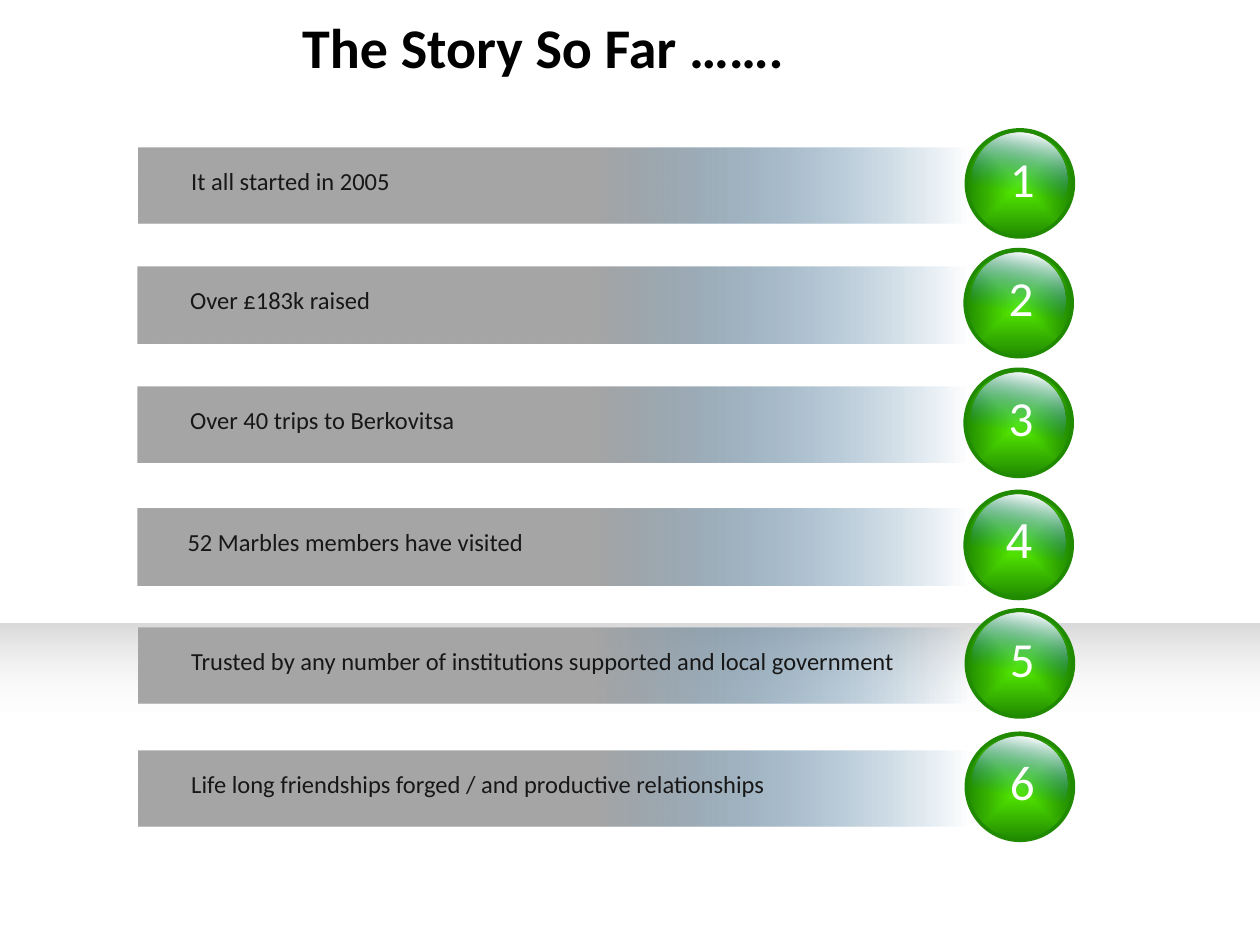
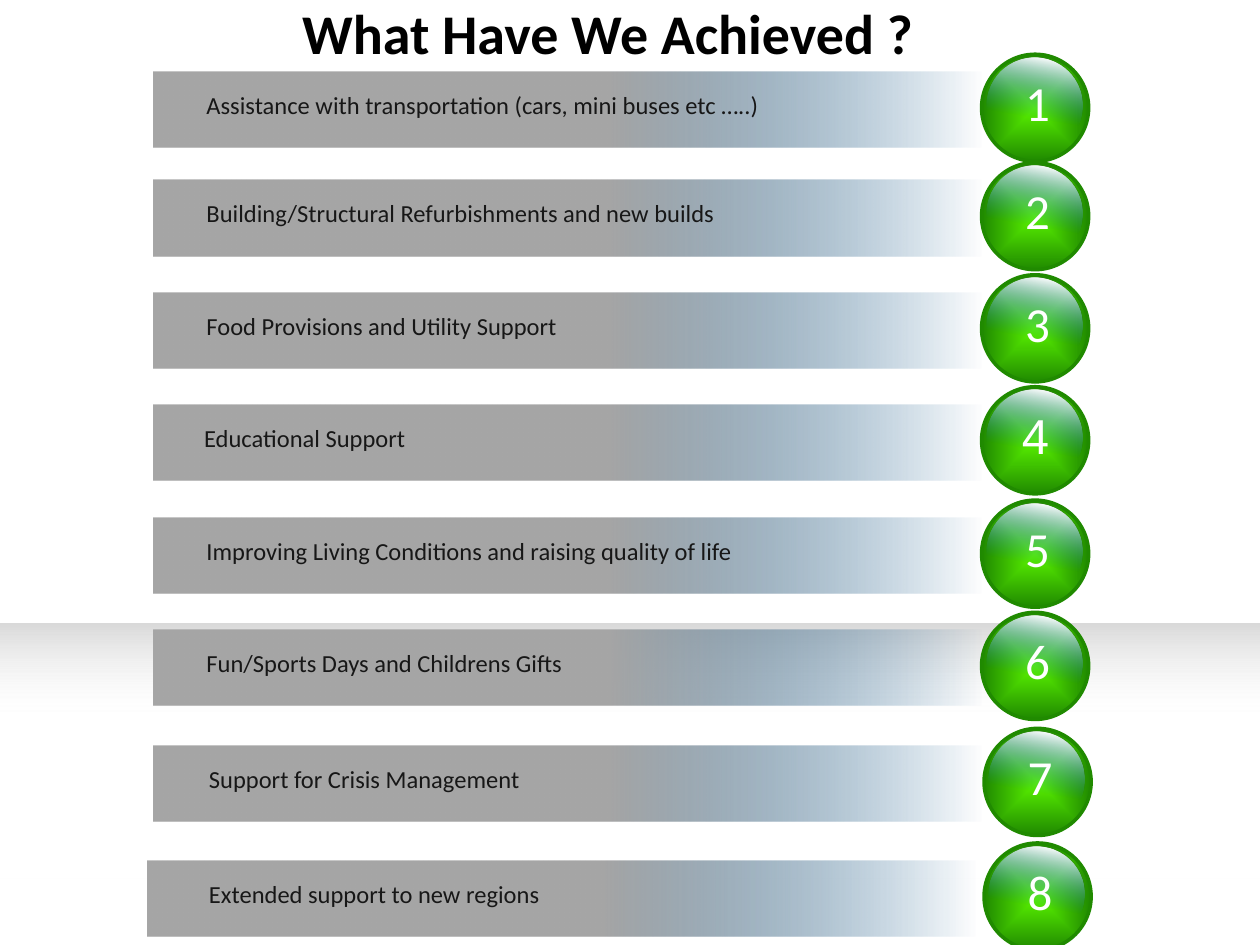
from pptx import Presentation
from pptx.dml.color import RGBColor
from pptx.enum.shapes import MSO_SHAPE
from pptx.enum.text import MSO_AUTO_SIZE
from pptx.oxml import parse_xml
from pptx.oxml.ns import nsdecls
from pptx.util import Pt

STORY = [
    ("It all started in 2005", 552.2, 74.2),
    ("Over £183k raised", 551.5, 142.6),
    ("Over 40 trips to Berkovitsa", 551.5, 211),
    ("52 Marbles members have visited", 551.5, 280.8),
    ("Trusted by any number of institutions supported and local government", 552.2, 348.5),
    ("Life long friendships forged / and productive relationships", 552.2, 419),
]
GAINS = [
    ("Assistance with transportation (cars, mini buses etc …..)", 560.9, 31),
    ("Building/Structural Refurbishments and new builds", 560.9, 92.9),
    ("Food Provisions and Utility Support", 560.9, 157),
    ("Educational Support", 560.9, 221),
    ("Improving Living Conditions and raising quality of life", 560.9, 285.8),
    ("Fun/Sports Days and Childrens Gifts", 560.9, 349.9),
    ("Support for Crisis Management", 562.3, 416.2),
    ("Extended support to new regions", 562.3, 481.7),
]
SLIDES = [
    ("The Story So Far …….", 3.6, 363, STORY, {}),
    ("What Have We Achieved ?", -4.3, 468, GAINS, {7: -1.4, 8: -5}),
]

FONT = "Calibri"
BALL, GLASS = 61.2, 54.7
LINEAR = '<a:lin ang="{}" scaled="0"/>'
CENTRE = '<a:path path="shape"><a:fillToRect l="50000" t="50000" r="50000" b="50000"/></a:path>'
BAND = ([(0, "D9D9D9", 100), (39, "FFFFFF", 0)], LINEAR.format(5400000))
GREEN = ([(0, "5AF300", 100), (100, "208A00", 100)], CENTRE)
SHINE = ([(6, "FFFFFF", 100), (61, "0070C0", 0)], LINEAR.format(6000000))
FADE = ([(55, "A6A6A6", 100), (100, "004D86", 0)], LINEAR.format(0))


def color(code):
    return RGBColor.from_string(code)


def shade(shape, stops, way):
    marks = "".join(
        f'<a:gs pos="{pos * 1000}"><a:srgbClr val="{code}">'
        f'<a:alpha val="{alpha * 1000}"/></a:srgbClr></a:gs>'
        for pos, code, alpha in stops
    )
    shape._element.spPr.insert(2, parse_xml(
        f'<a:gradFill {nsdecls("a")} rotWithShape="1">'
        f'<a:gsLst>{marks}</a:gsLst>{way}</a:gradFill>'
    ))


def draw(shapes, kind, box, fill, edge=None):
    shape = shapes.add_shape(kind, *map(Pt, box))
    shape.shadow.inherit = False
    shade(shape, *fill)
    if edge:
        shape.line.color.rgb = color(edge)
        shape.line.width = Pt(2)
    else:
        shape.line.fill.background()


def write(shapes, text, box, size, code, font=FONT, bold=False):
    frame = shapes.add_textbox(*map(Pt, box)).text_frame
    frame.word_wrap = True
    frame.auto_size = MSO_AUTO_SIZE.SHAPE_TO_FIT_TEXT
    run = frame.paragraphs[0].add_run()
    run.text = text
    run.font.name = font
    run.font.size = Pt(size)
    run.font.bold = bold
    run.font.color.rgb = color(code)


def add_row(slide, num, text, left, top, shift):
    shapes = slide.shapes.add_group_shape().shapes
    odd = num == 4
    start = left - 473
    draw(shapes, MSO_SHAPE.OVAL, (left, top, BALL, BALL), GREEN, "208A00")
    draw(shapes, MSO_SHAPE.OVAL, (left + 2.9, top + 1.9, GLASS, GLASS), SHINE)
    write(shapes, str(num), (left + (16 if odd else 17.8), top + 7, 40 if odd else 29, 41),
          28, "FFFFFF", "Arial" if odd else FONT)
    draw(shapes, MSO_SHAPE.RECTANGLE, (start + shift, top + 10, 473.8, 43.5), FADE)
    write(shapes, text, (start + (21.6 if odd else 23), top + 17, 450, 24.5), 14, "171717")


def main():
    deck = Presentation()
    deck.slide_width, deck.slide_height = Pt(720), Pt(540)
    for title, top, width, rows, shifts in SLIDES:
        slide = deck.slides.add_slide(deck.slide_layouts[6])
        draw(slide.shapes, MSO_SHAPE.RECTANGLE, (0, 356.4, 720, 145.4), BAND)
        for num, row in enumerate(rows, 1):
            add_row(slide, num, *row, shifts.get(num, 0))
        write(slide.shapes, title, (165.6, top, width, 46), 32, "000000", bold=True)
    deck.save("out.pptx")


if __name__ == "__main__":
    main()
